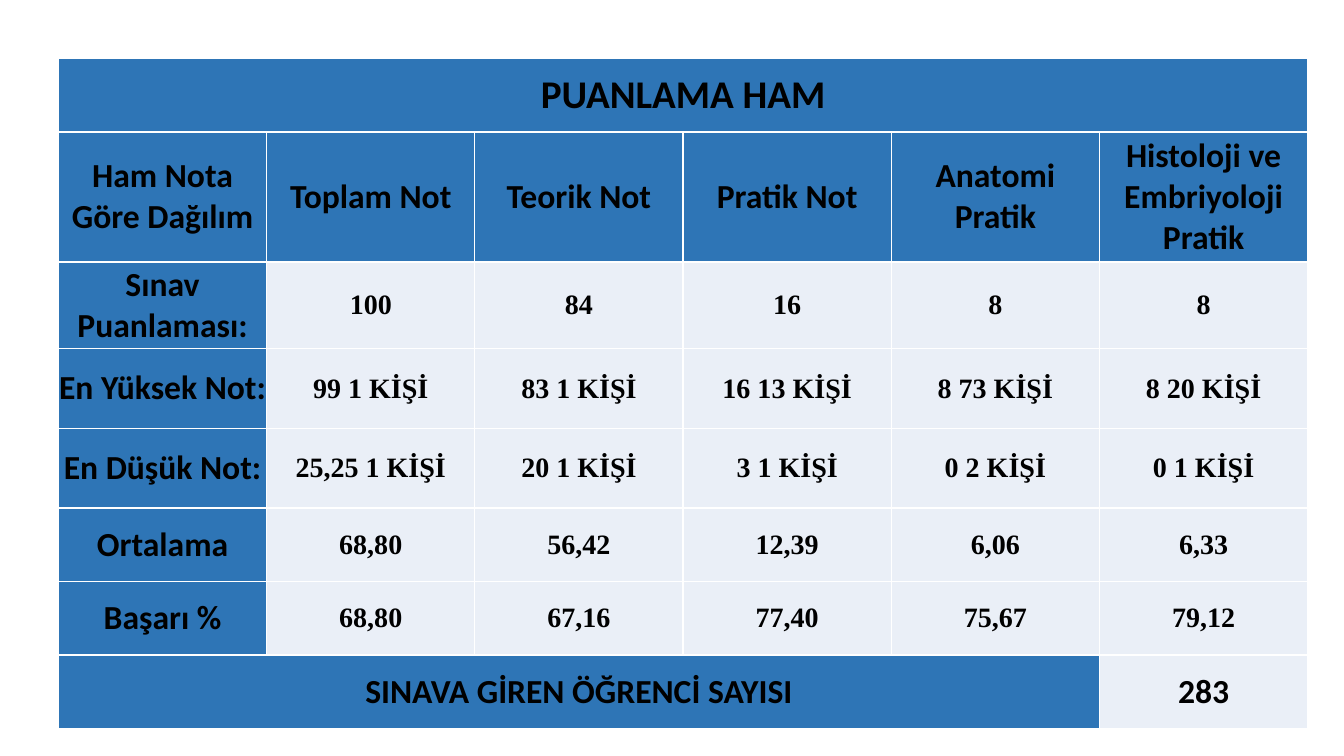
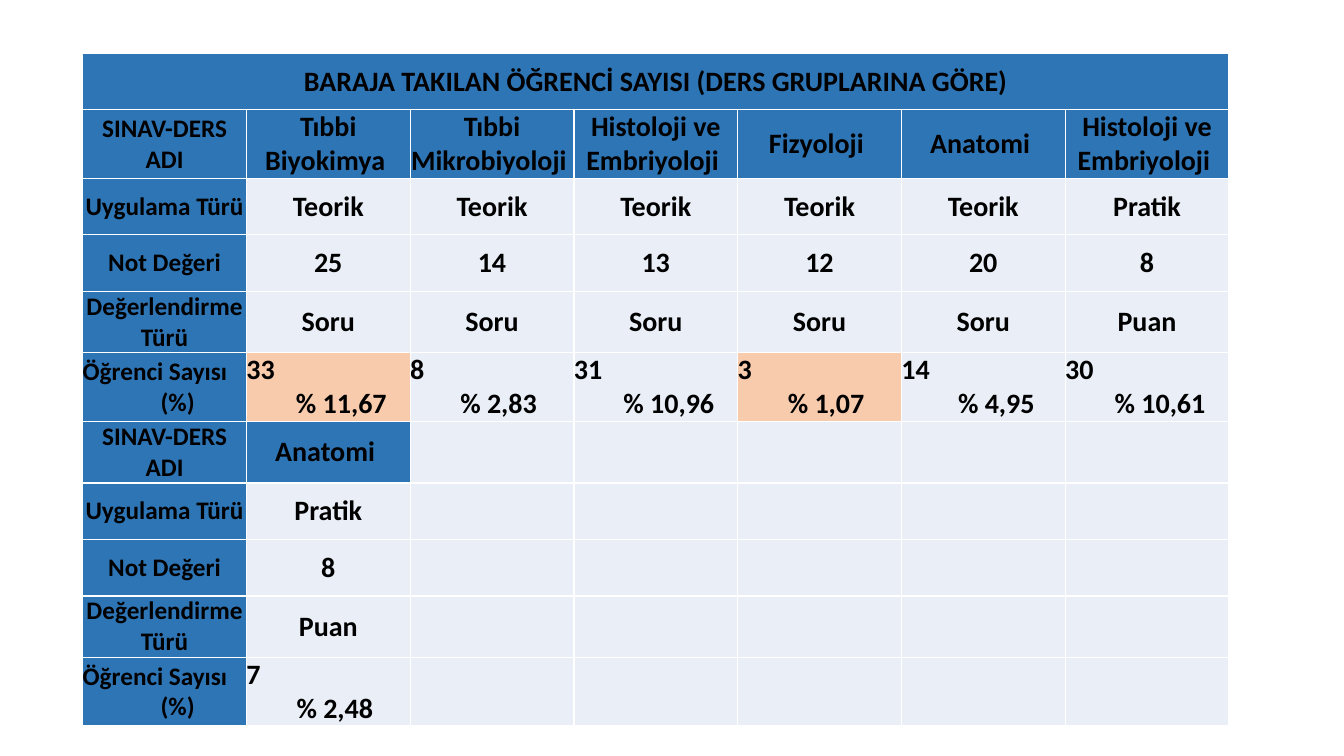
from pptx import Presentation
from pptx.dml.color import RGBColor
from pptx.enum.text import MSO_ANCHOR, PP_ALIGN
from pptx.util import Inches, Pt
from lxml.etree import SubElement
from pptx.oxml.ns import qn

HUES = {"head": "2E75B6", "body": "EAEFF7", "warn": "F8CBAD",
        "text": "000000", "line": "FFFFFF"}

SCORES = [
    ["PUANLAMA HAM"],
    ["Ham Nota Göre Dağılım", "Toplam Not", "Teorik Not", "Pratik Not",
     "Anatomi Pratik", "Histoloji ve Embriyoloji Pratik"],
    ["Sınav Puanlaması:", "100", "84", "16", "8", "8"],
    ["En Yüksek Not:", "99 1 KİŞİ", "83 1 KİŞİ", "16 13 KİŞİ", "8 73 KİŞİ", "8 20 KİŞİ"],
    ["En Düşük Not:", "25,25 1 KİŞİ", "20 1 KİŞİ", "3 1 KİŞİ", "0 2 KİŞİ", "0 1 KİŞİ"],
    ["Ortalama", "68,80", "56,42", "12,39", "6,06", "6,33"],
    ["Başarı %", "68,80", "67,16", "77,40", "75,67", "79,12"],
    ["SINAVA GİREN ÖĞRENCİ SAYISI", "", "", "", "", "283"],
]

LABELS = ["SINAV-DERS ADI", "Uygulama Türü", "Not Değeri",
          "Değerlendirme Türü", "Öğrenci Sayısı|(%)"]
COURSES = [
    ["Tıbbi Biyokimya ", "Teorik", "25", "Soru", "33|% 11,67"],
    ["Tıbbi Mikrobiyoloji ", "Teorik", "14", "Soru", "8|% 2,83"],
    ["Histoloji ve Embriyoloji ", "Teorik", "13", "Soru", "31|% 10,96"],
    ["Fizyoloji ", "Teorik", "12", "Soru", "3|% 1,07"],
    ["Anatomi ", "Teorik", "20", "Soru", "14|% 4,95"],
    ["Histoloji ve Embriyoloji ", "Pratik", "8", "Puan", "30|% 10,61"],
]
LAST = ["Anatomi ", "Pratik", "8", "Puan", "7|% 2,48"]


def edge(cell):
    props = cell._tc.get_or_add_tcPr()
    for side in ("lnL", "lnR", "lnT", "lnB"):
        line = SubElement(props, qn(f"a:{side}"), w=str(Pt(1)))
        fill = SubElement(line, qn("a:solidFill"))
        SubElement(fill, qn("a:srgbClr"), val=HUES["line"])


def paint(cell, hue):
    cell.fill.solid()
    cell.fill.fore_color.rgb = RGBColor.from_string(HUES[hue])


def write(cell, text, size, face="Calibri"):
    parts = text.split("|")
    frame = cell.text_frame
    for i, part in enumerate(parts):
        para = frame.paragraphs[0] if i == 0 else frame.add_paragraph()
        para.text = part
        para.alignment = PP_ALIGN.CENTER
        para.font.size = Pt(size)
        para.font.name = face
        para.font.bold = True
        para.font.color.rgb = RGBColor.from_string(HUES["text"])
    if len(parts) > 1:
        frame.paragraphs[0].alignment = PP_ALIGN.LEFT
        shift = Inches(0.13 * min(len(parts[0]), 2))
        para._p.get_or_add_pPr().set("marL", str(shift))


def grid(slide, box, highs, cols):
    left, top, width = box
    frame = slide.shapes.add_table(len(highs), cols, Inches(left), Inches(top),
                                   Inches(width), Inches(sum(highs)))
    table = frame.table
    table.first_row = table.horz_banding = False
    for row, high in zip(table.rows, highs):
        row.height = Inches(high)
    for cell in table.iter_cells():
        cell.margin_left = cell.margin_right = 0
        cell.margin_top = cell.margin_bottom = 0
        cell.vertical_anchor = MSO_ANCHOR.MIDDLE
        edge(cell)
        paint(cell, "body")
    table.cell(0, 0).merge(table.cell(0, cols - 1))
    return table


def score(slide, box):
    highs = [0.73, 1.29, 0.86, 0.79, 0.79, 0.73, 0.73, 0.73]
    table = grid(slide, box, highs, 6)
    end = len(SCORES) - 1
    table.cell(end, 0).merge(table.cell(end, 4))
    for r, row in enumerate(SCORES):
        for c, text in enumerate(row):
            if not text:
                continue
            cell = table.cell(r, c)
            head = r < 2 or c == 0
            if head:
                paint(cell, "head")
            if head or r == end:
                write(cell, text, 28 if r == 0 else 24)
            else:
                write(cell, text, 20, "Times New Roman")


def column(table, top, col, texts, size):
    for i, text in enumerate(texts):
        cell = table.cell(top + i, col)
        if col == 0 or i == 0:
            paint(cell, "head")
        write(cell, text, size)


def barrier(slide, box):
    group = [0.56, 0.56, 0.56, 0.66]
    table = grid(slide, box, [0.56, 0.66] + group + [0.6] + group, 7)
    title = table.cell(0, 0)
    paint(title, "head")
    write(title, "BARAJA TAKILAN ÖĞRENCİ SAYISI (DERS GRUPLARINA GÖRE)", 20)
    for top, block in ((1, COURSES), (6, [LAST])):
        column(table, top, 0, LABELS, 18)
        for col, texts in enumerate(block, 1):
            column(table, top, col, texts, 20)
    for col in (1, 4):
        paint(table.cell(5, col), "warn")


def main():
    deck = Presentation()
    deck.slide_width = Inches(13.33)
    deck.slide_height = Inches(7.5)
    blank = deck.slide_layouts[6]
    score(deck.slides.add_slide(blank), (0.58, 0.58, 12.39))
    barrier(deck.slides.add_slide(blank), (0.82, 0.53, 11.37))
    deck.save("out.pptx")


if __name__ == "__main__":
    main()
